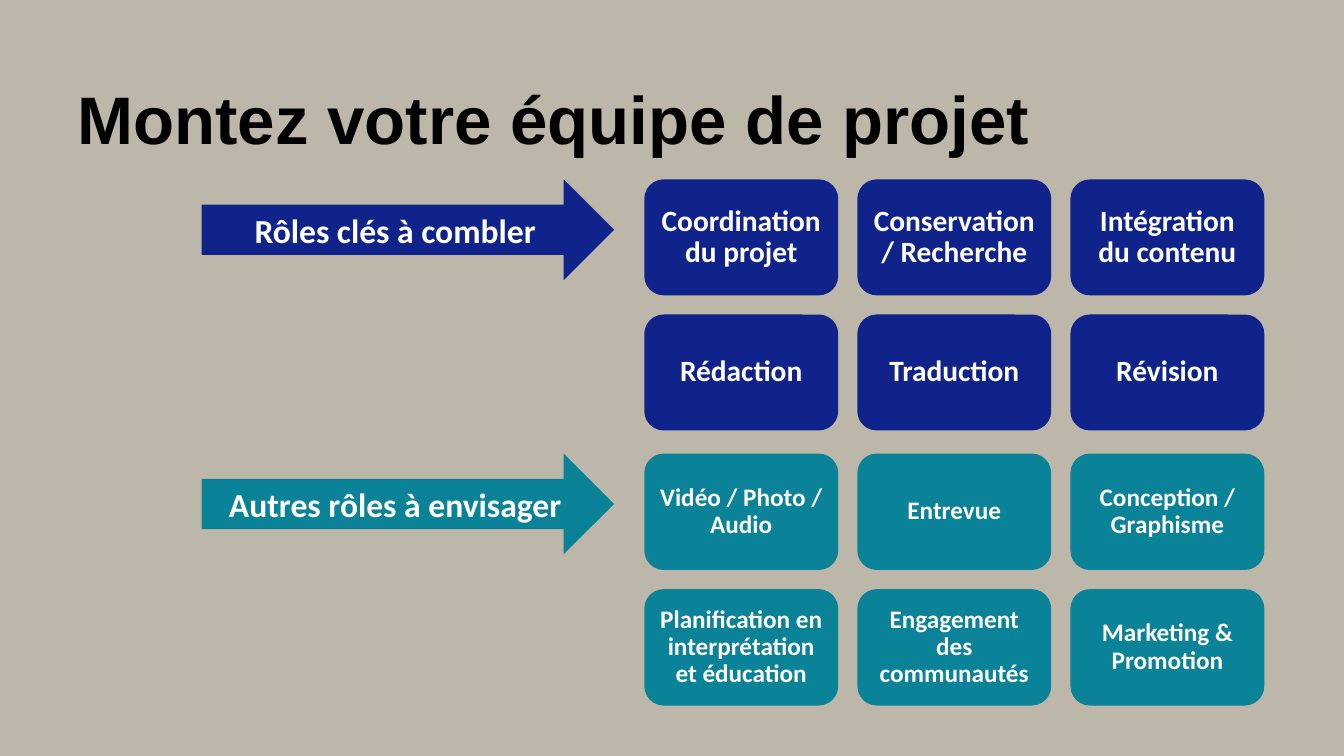
from pptx import Presentation
from pptx.dml.color import RGBColor
from pptx.enum.shapes import MSO_SHAPE
from pptx.enum.text import MSO_ANCHOR, PP_ALIGN
from pptx.util import Inches, Pt

ARROW = MSO_SHAPE.RIGHT_ARROW
TILE = MSO_SHAPE.ROUNDED_RECTANGLE
TOP, MIDDLE = MSO_ANCHOR.TOP, MSO_ANCHOR.MIDDLE
LEFT, CENTER = PP_ALIGN.LEFT, PP_ALIGN.CENTER

BACKGROUND = RGBColor(0xBD, 0xB7, 0xAA)
BLACK = RGBColor(0, 0, 0)
WHITE = RGBColor(0xFF, 0xFF, 0xFF)
NAVY = RGBColor(0x10, 0x23, 0x8B)
TEAL = RGBColor(0x0A, 0x82, 0x97)

COLUMNS, ROWS = 3, 2
GAP = 0.19
ARROW_WIDTH, ARROW_HEIGHT = 4.09, 1
TILES_OFFSET = 4.39

KEY_ROLES = [
    "Coordination du projet", "Conservation / Recherche", "Intégration du contenu",
    "Rédaction", "Traduction", "Révision",
]
OTHER_ROLES = [
    "Vidéo / Photo / Audio", "Entrevue", "Conception / Graphisme",
    "Planification en interprétation et éducation", "Engagement des communautés",
    "Marketing & Promotion",
]


def write_text(shape, text, size, font="Calibri", color=WHITE, align=CENTER,
               anchor=MIDDLE, margins=(0.1, 0.05, 0.1, 0.05), spacing=1.0):
    frame = shape.text_frame
    frame.word_wrap = True
    frame.vertical_anchor = anchor
    (frame.margin_left, frame.margin_top,
     frame.margin_right, frame.margin_bottom) = map(Inches, margins)
    paragraph = frame.paragraphs[0]
    paragraph.alignment = align
    paragraph.line_spacing = spacing
    run = paragraph.add_run()
    run.text = text
    run.font.name = font
    run.font.size = Pt(size)
    run.font.bold = True
    run.font.color.rgb = color


def add_block(slide, kind, box, color):
    shape = slide.shapes.add_shape(kind, *map(Inches, box))
    shape.shadow.inherit = False
    shape.fill.solid()
    shape.fill.fore_color.rgb = color
    shape.line.fill.background()
    return shape


def add_title(slide, text, box):
    title = slide.shapes.title
    title.left, title.top, title.width, title.height = map(Inches, box)
    write_text(title, text, 48, font="Arial", color=BLACK, align=LEFT,
               anchor=TOP, margins=(0, 0, 0, 0.28))


def add_role_group(slide, heading, roles, box, color, size, margin):
    left, top, width, height = box
    arrow_box = (left, top, ARROW_WIDTH, ARROW_HEIGHT)
    write_text(add_block(slide, ARROW, arrow_box, color), heading, 24)

    tiles_left = left + TILES_OFFSET
    tile_width = (width - TILES_OFFSET - GAP * (COLUMNS - 1)) / COLUMNS
    tile_height = (height - GAP * (ROWS - 1)) / ROWS
    for index, role in enumerate(roles):
        row, column = divmod(index, COLUMNS)
        tile_box = (tiles_left + column * (tile_width + GAP),
                    top + row * (tile_height + GAP), tile_width, tile_height)
        tile = add_block(slide, TILE, tile_box, color)
        write_text(tile, role, size, margins=(margin,) * 4, spacing=0.9)


def main():
    presentation = Presentation()
    presentation.slide_width = Inches(13.33)
    presentation.slide_height = Inches(7.5)
    slide = presentation.slides.add_slide(presentation.slide_layouts[5])
    slide.background.fill.solid()
    slide.background.fill.fore_color.rgb = BACKGROUND

    add_title(slide, "Montez votre équipe de projet", (0.77, 0.77, 12.34, 2.02))
    add_role_group(slide, "Rôles clés à combler", KEY_ROLES,
                   (2, 1.78, 10.54, 2.49), NAVY, size=21, margin=0.08)
    add_role_group(slide, "Autres rôles à envisager", OTHER_ROLES,
                   (2, 4.5, 10.54, 2.5), TEAL, size=18, margin=0.07)
    presentation.save("out.pptx")


if __name__ == "__main__":
    main()
